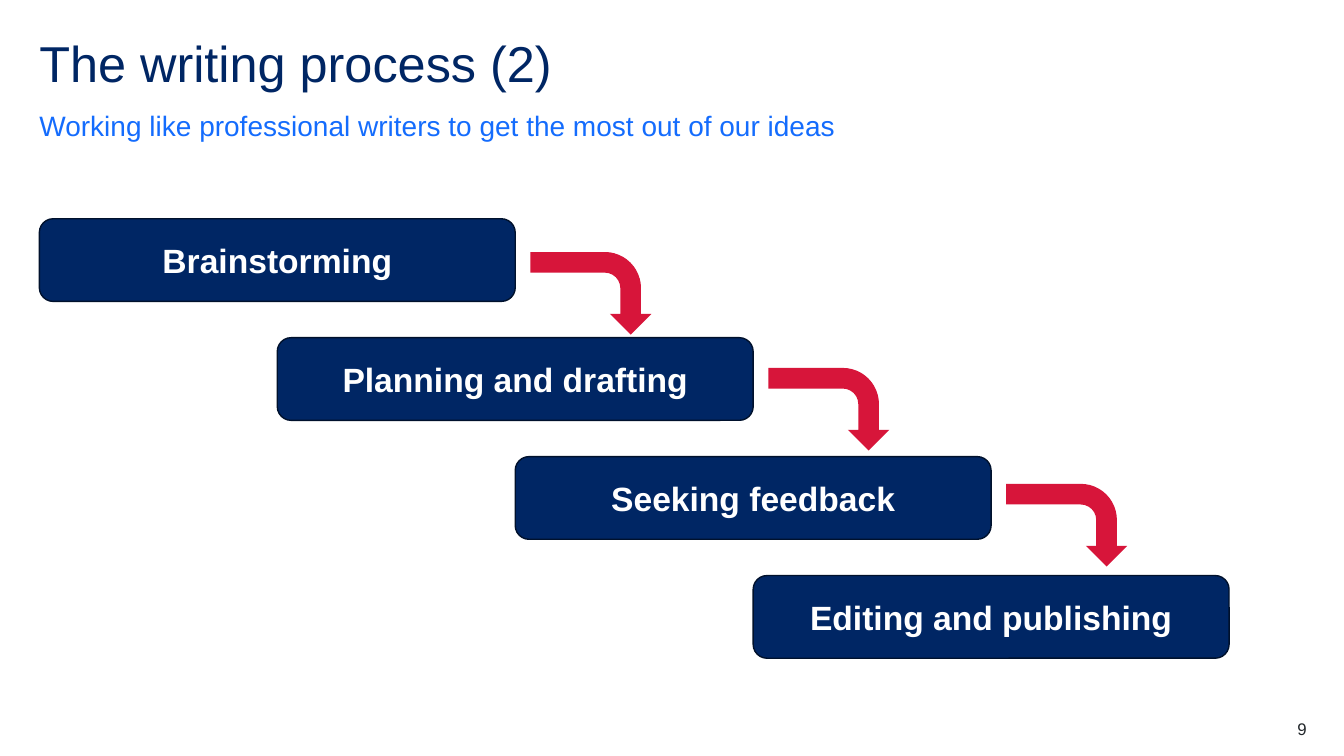
"""Build a slide showing the writing process as a descending staircase."""
from pptx import Presentation
from pptx.dml.color import RGBColor
from pptx.enum.shapes import MSO_SHAPE
from pptx.enum.text import MSO_ANCHOR, PP_ALIGN
from pptx.util import Inches, Pt

NAVY = RGBColor(0x00, 0x26, 0x64)
NAVY_EDGE = RGBColor(0x00, 0x11, 0x2C)
BLUE = RGBColor(0x14, 0x6C, 0xFD)
RED = RGBColor(0xD7, 0x15, 0x3A)
CHARCOAL = RGBColor(0x22, 0x27, 0x2B)
WHITE = RGBColor(0xFF, 0xFF, 0xFF)

LEFT, CENTER, RIGHT = PP_ALIGN.LEFT, PP_ALIGN.CENTER, PP_ALIGN.RIGHT
TOP, MIDDLE, BOTTOM = MSO_ANCHOR.TOP, MSO_ANCHOR.MIDDLE, MSO_ANCHOR.BOTTOM
ROUNDED = MSO_SHAPE.ROUNDED_RECTANGLE
BENT_ARROW = MSO_SHAPE.BENT_ARROW

FONT = "Arial"
SLIDE_WIDTH, SLIDE_HEIGHT = 13.33, 7.5
MARGIN = 0.39
CONTENT_WIDTH = SLIDE_WIDTH - 2 * MARGIN
STAGES = ["Brainstorming", "Planning and drafting", "Seeking feedback", "Editing and publishing"]
STAGE_TOP, STAGE_HEIGHT = 2.17, 0.82
COLUMN, ROW = 2.36, 1.18
ARROW_LEFT, ARROW_TOP, ARROW_ROW = 5.45, 2.31, 1.15
ARROW_WIDTH, ARROW_HEIGHT = 0.82, 1.2


def write_text(frame, text, size, color, align=LEFT, anchor=TOP, bold=False):
    """Write one styled run and return its paragraph."""
    frame.word_wrap = True
    frame.vertical_anchor = anchor
    paragraph = frame.paragraphs[0]
    paragraph.alignment = align
    run = paragraph.add_run()
    run.text = text
    run.font.name = FONT
    run.font.size = Pt(size)
    run.font.bold = bold
    run.font.color.rgb = color
    return paragraph


def add_label(slide, box, text, size, color, **style):
    """Add a text box without insets and return its paragraph."""
    frame = slide.shapes.add_textbox(*map(Inches, box)).text_frame
    frame.margin_left = frame.margin_right = 0
    frame.margin_top = frame.margin_bottom = 0
    return write_text(frame, text, size, color, **style)


def add_filled_shape(slide, kind, box, fill):
    """Add a flat preset shape without an outline."""
    shape = slide.shapes.add_shape(kind, *map(Inches, box))
    shape.shadow.inherit = False
    shape.fill.solid()
    shape.fill.fore_color.rgb = fill
    shape.line.fill.background()
    return shape


def add_stage(slide, index, text):
    """Add one step of the staircase."""
    box = (MARGIN + index * COLUMN, STAGE_TOP + index * ROW, 2 * COLUMN, STAGE_HEIGHT)
    stage = add_filled_shape(slide, ROUNDED, box, NAVY)
    stage.line.color.rgb = NAVY_EDGE
    stage.line.width = Pt(1)
    write_text(stage.text_frame, text, 24, WHITE, align=CENTER, anchor=MIDDLE, bold=True)


def add_step_arrow(slide, index):
    """Add the arrow leading down from one step to the next."""
    box = (ARROW_LEFT + index * COLUMN, ARROW_TOP + index * ARROW_ROW, ARROW_WIDTH, ARROW_HEIGHT)
    add_filled_shape(slide, BENT_ARROW, box, RED).rotation = 90


def main():
    """Create the presentation and save it."""
    presentation = Presentation()
    presentation.slide_width = Inches(SLIDE_WIDTH)
    presentation.slide_height = Inches(SLIDE_HEIGHT)
    slide = presentation.slides.add_slide(presentation.slide_layouts[6])

    title = add_label(slide, (MARGIN, MARGIN, CONTENT_WIDTH, 0.6),
                      "The writing process (2)", 36, NAVY)
    title.line_spacing = 0.9
    subtitle = add_label(slide, (MARGIN, 1.07, CONTENT_WIDTH, 0.34),
                         "Working like professional writers to get the most out of our ideas",
                         20, BLUE, anchor=BOTTOM)
    subtitle.line_spacing = 1.5
    subtitle.space_after = Pt(12)

    for index, text in enumerate(STAGES):
        add_stage(slide, index, text)
    for index in range(len(STAGES) - 1):
        add_step_arrow(slide, index)
    add_label(slide, (12.17, 7.13, 0.79, 0.2), "9", 12, CHARCOAL, align=RIGHT)

    presentation.save("out.pptx")


if __name__ == "__main__":
    main()
